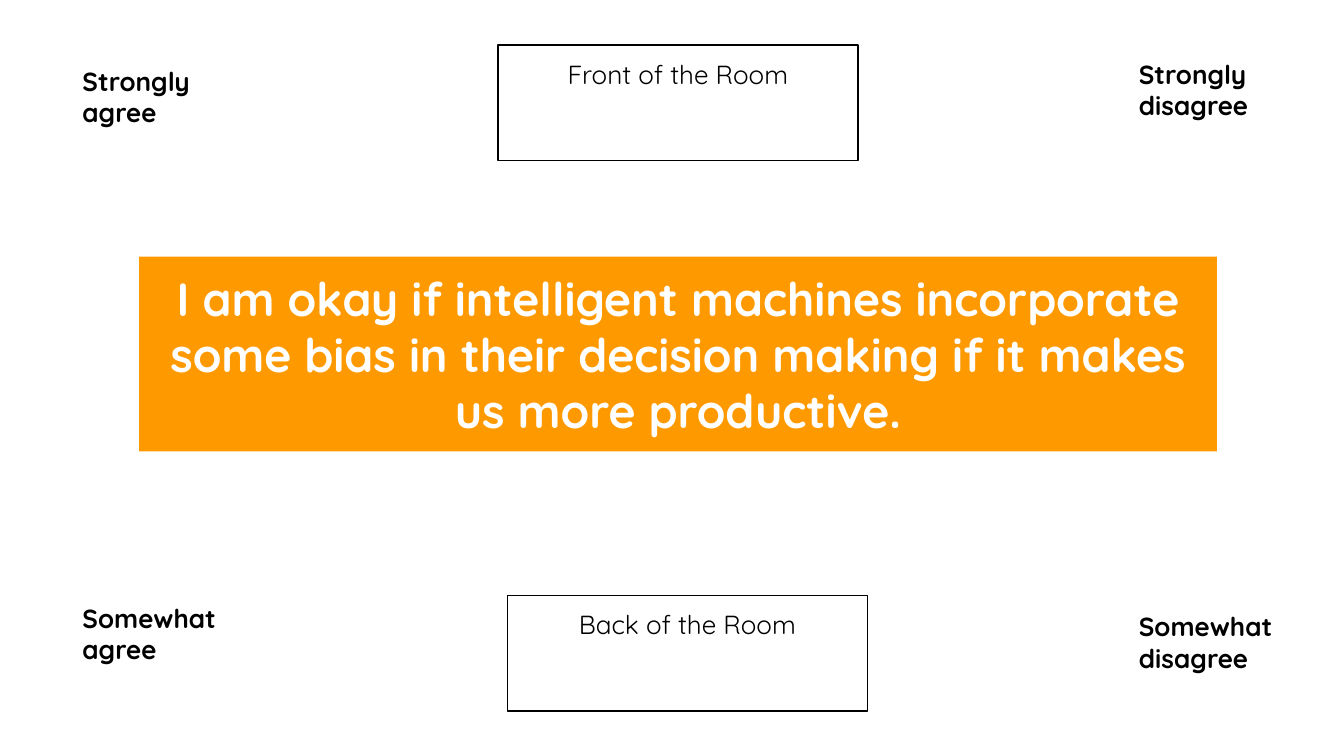
from dataclasses import dataclass

from pptx import Presentation
from pptx.dml.color import RGBColor
from pptx.enum.shapes import MSO_SHAPE
from pptx.enum.text import MSO_ANCHOR, MSO_AUTO_SIZE, PP_ALIGN
from pptx.util import Emu, Pt

RECTANGLE = MSO_SHAPE.RECTANGLE
TOP, BOTTOM = MSO_ANCHOR.TOP, MSO_ANCHOR.BOTTOM
LEFT, CENTER = PP_ALIGN.LEFT, PP_ALIGN.CENTER
NO_AUTOFIT = MSO_AUTO_SIZE.NONE
TITLE_ONLY = 5
EMU_PER_PX = 4572  # 200 px to the inch
PAGE_WIDTH, PAGE_HEIGHT = 2000, 1125


@dataclass(frozen=True)
class Theme:
    font: str = "Quicksand"
    paper: RGBColor = RGBColor(0xFF, 0xFF, 0xFF)
    ink: RGBColor = RGBColor(0x00, 0x00, 0x00)
    accent: RGBColor = RGBColor(0xFF, 0x99, 0x00)
    label_size: Pt = Pt(14)
    statement_size: Pt = Pt(25)
    outline: Pt = Pt(0.75)
    inset: int = 20


THEME = Theme()

STATEMENT = (
    "I am okay if intelligent machines incorporate some bias in their "
    "decision making if it makes us more productive."
)
STATEMENT_BOX = (207, 382, 1604, 290)
SIDE_SIZE = (536, 172)
ROOM_SIDES = {
    "Front of the Room": (741, 67),
    "Back of the Room": (755, 886),
}
CORNER_SIZE = (242, 172)
CORNERS = {
    "Strongly agree": (103, 77),
    "Somewhat agree": (103, 876),
    "Somewhat disagree": (1675, 889),
    "Strongly disagree": (1675, 67),
}


def px(length):
    return Emu(length * EMU_PER_PX)


def write(shape, text, size, color, bold=False, align=LEFT, anchor=TOP):
    frame = shape.text_frame
    frame.text = text
    frame.word_wrap = True
    frame.auto_size = NO_AUTOFIT
    frame.vertical_anchor = anchor
    frame.margin_left = frame.margin_right = px(THEME.inset)
    frame.margin_top = frame.margin_bottom = px(THEME.inset)
    para = frame.paragraphs[0]
    para.alignment = align
    para.font.name = THEME.font
    para.font.size = size
    para.font.bold = bold
    para.font.color.rgb = color


def add_room_side(page, box, text):
    side = page.shapes.add_shape(RECTANGLE, *map(px, box))
    side.shadow.inherit = False
    side.fill.background()
    side.line.color.rgb = THEME.ink
    side.line.width = THEME.outline
    write(side, text, THEME.label_size, THEME.ink, align=CENTER)


def add_corner(page, box, text):
    corner = page.shapes.add_textbox(*map(px, box))
    write(corner, text, THEME.label_size, THEME.ink, bold=True)


def place_statement(page, box, text):
    title = page.shapes.title
    title.left, title.top, title.width, title.height = map(px, box)
    title.fill.solid()
    title.fill.fore_color.rgb = THEME.accent
    write(title, text, THEME.statement_size, THEME.paper,
          bold=True, align=CENTER, anchor=BOTTOM)


def main():
    deck = Presentation()
    deck.slide_width, deck.slide_height = px(PAGE_WIDTH), px(PAGE_HEIGHT)
    page = deck.slides.add_slide(deck.slide_layouts[TITLE_ONLY])
    page.background.fill.solid()
    page.background.fill.fore_color.rgb = THEME.paper

    place_statement(page, STATEMENT_BOX, STATEMENT)
    for text, corner in ROOM_SIDES.items():
        add_room_side(page, corner + SIDE_SIZE, text)
    for text, corner in CORNERS.items():
        add_corner(page, corner + CORNER_SIZE, text)
    deck.save("out.pptx")


if __name__ == "__main__":
    main()
